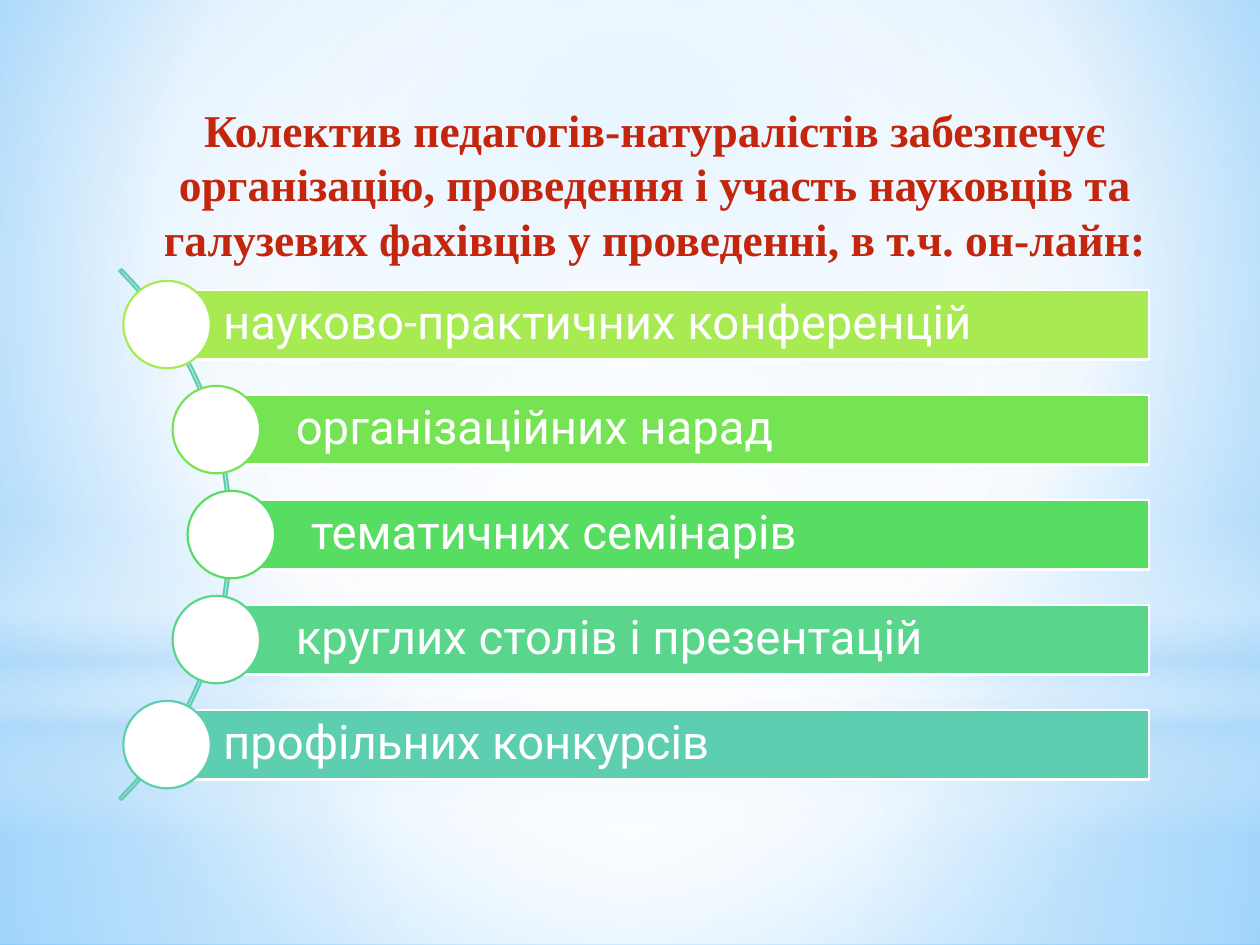
from dataclasses import dataclass
from math import sqrt

from lxml.etree import SubElement
from pptx import Presentation
from pptx.dml.color import RGBColor
from pptx.enum.shapes import MSO_SHAPE
from pptx.enum.text import MSO_ANCHOR, PP_ALIGN
from pptx.oxml.ns import qn
from pptx.util import Pt


@dataclass(frozen=True)
class Theme:
    white: str = "FFFFFF"
    haze: str = "B4DCFA"
    sky_light: str = "9ED5FF"
    sky_deep: str = "5BB9FF"
    title: str = "C3260C"
    arc: str = "5DCEAF"
    rows: tuple = ("A7EA52", "76E354", "57DD62", "5AD58C", "5DCEAF")
    title_font: str = "Times New Roman"
    title_size: float = 26
    row_font: str = "Roboto"
    row_size: float = 27
    line_width: float = 1.25


THEME = Theme()
SLIDE_WIDTH, SLIDE_HEIGHT = 720, 540
HORIZON = 402
TITLE = ("Колектив педагогів-натуралістів забезпечує організацію, проведення "
         "і участь науковців та галузевих фахівців у проведенні, в т.ч. он-лайн:")
ACTIVITIES = (
    "науково-практичних конференцій",
    "організаційних нарад",
    "тематичних семінарів",
    "круглих столів і презентацій",
    "профільних конкурсів",
)


def paint_gradient(owner, fill, stops, focus=None):
    """Stops are (position, colour, opacity) in percent; without a focus it runs downwards."""
    fill.gradient()
    gradient = owner._element.find(".//" + qn("a:gradFill"))
    for child in list(gradient):
        gradient.remove(child)
    stop_list = SubElement(gradient, qn("a:gsLst"))
    for position, colour, opacity in stops:
        stop = SubElement(stop_list, qn("a:gs"), pos=str(position * 1000))
        colour_element = SubElement(stop, qn("a:srgbClr"), val=colour)
        if opacity < 100:
            SubElement(colour_element, qn("a:alpha"), val=str(opacity * 1000))
    if focus is None:
        SubElement(gradient, qn("a:lin"), ang="5400000", scaled="0")
    else:
        radial = SubElement(gradient, qn("a:path"), path="circle")
        insets = {side: str(inset * 1000) for side, inset in zip("ltrb", focus)}
        SubElement(radial, qn("a:fillToRect"), **insets)


def add_plain_shape(slide, kind, box, fill=None, line=None):
    shape = slide.shapes.add_shape(kind, *(Pt(length) for length in box))
    shape.shadow.inherit = False
    if fill:
        shape.fill.solid()
        shape.fill.fore_color.rgb = RGBColor.from_string(fill)
    else:
        shape.fill.background()
    if line:
        shape.line.color.rgb = RGBColor.from_string(line)
        shape.line.width = Pt(THEME.line_width)
    else:
        shape.line.fill.background()
    return shape


def add_text(frame, text, font_name, size, colour, bold=False):
    paragraph = frame.paragraphs[0]
    run = paragraph.add_run()
    run.text = text
    run.font.name = font_name
    run.font.size = Pt(size)
    run.font.bold = bold
    run.font.color.rgb = RGBColor.from_string(colour)
    return paragraph


def add_backdrop(slide, box):
    left, top, width, height = box
    white, haze = THEME.white, THEME.haze
    centre = (50, 50, 50, 50)
    paint_gradient(slide, slide.background.fill,
                   [(0, THEME.sky_light, 100), (60, white, 100), (100, THEME.sky_deep, 100)],
                   (20, 10, 20, 60))
    layers = (
        (MSO_SHAPE.RECTANGLE, HORIZON, height - HORIZON, centre,
         [(0, white, 91), (37, white, 76), (100, haze, 79)]),
        (MSO_SHAPE.RECTANGLE, 0, HORIZON, centre,
         [(0, white, 89), (48, white, 62), (100, haze, 79)]),
        (MSO_SHAPE.RECTANGLE, 297, 180, None,
         [(0, white, 0), (29, white, 30), (45, haze, 40), (55, white, 26),
          (65, haze, 60), (100, white, 0)]),
        (MSO_SHAPE.OVAL, 126, HORIZON, centre, [(0, white, 100), (56, white, 0)]),
    )
    for kind, offset, layer_height, focus, stops in layers:
        layer = add_plain_shape(slide, kind, (left, top + offset, width, layer_height))
        paint_gradient(layer, layer.fill, stops, focus)


def add_title(slide, box):
    frame = slide.shapes.add_textbox(*(Pt(length) for length in box)).text_frame
    frame.word_wrap = True
    paragraph = add_text(frame, TITLE, THEME.title_font, THEME.title_size, THEME.title, True)
    paragraph.alignment = PP_ALIGN.CENTER


def add_row(slide, start, right, middle, pitch, text, colour, extra_indent):
    """A bar starting at the centre of its disc."""
    bar_height, disc = pitch * 2 / 3, pitch * 5 / 6
    bar = add_plain_shape(slide, MSO_SHAPE.RECTANGLE,
                          (start, middle - bar_height / 2, right - start, bar_height),
                          colour, THEME.white)
    frame = bar.text_frame
    frame.word_wrap = True
    frame.vertical_anchor = MSO_ANCHOR.MIDDLE
    frame.margin_left = Pt(32 + extra_indent)
    frame.margin_top = frame.margin_right = frame.margin_bottom = Pt(5)
    paragraph = add_text(frame, text, THEME.row_font, THEME.row_size, THEME.white)
    paragraph.alignment = PP_ALIGN.LEFT
    paragraph.line_spacing = 0.9
    add_plain_shape(slide, MSO_SHAPE.OVAL,
                    (start - disc / 2, middle - disc / 2, disc, disc), THEME.white, colour)


def add_curved_list(slide, box):
    """Rows whose discs are strung along a quarter of a circle."""
    left, top, width, height = box
    pitch = height / len(ACTIVITIES)
    centre_y = top + height / 2
    radius = height * 0.715
    outer_offset = (height - pitch) / 2
    centre_x = left + pitch * 5 / 12 - sqrt(radius ** 2 - outer_offset ** 2)

    arc = add_plain_shape(slide, MSO_SHAPE.BLOCK_ARC,
                          (centre_x - radius, centre_y - radius, 2 * radius, 2 * radius),
                          line=THEME.arc)
    for index, value in enumerate((189, 27, 0.004)):
        arc.adjustments[index] = value

    last = len(ACTIVITIES) - 1
    for index, (text, colour) in enumerate(zip(ACTIVITIES, THEME.rows)):
        middle = top + pitch * (index + 0.5)
        start = centre_x + sqrt(radius ** 2 - (middle - centre_y) ** 2)
        extra_indent = 0 if index in (0, last) else 13.4
        add_row(slide, start, left + width, middle, pitch, text, colour, extra_indent)


def main():
    presentation = Presentation()
    presentation.slide_width, presentation.slide_height = Pt(SLIDE_WIDTH), Pt(SLIDE_HEIGHT)
    slide = presentation.slides.add_slide(presentation.slide_layouts[6])
    add_backdrop(slide, (0, 0, SLIDE_WIDTH, SLIDE_HEIGHT))
    add_curved_list(slide, (70.5, 155.5, 586, 300))
    add_title(slide, (65.5, 54.7, 618, 101.5))
    presentation.save("out.pptx")


if __name__ == "__main__":
    main()
